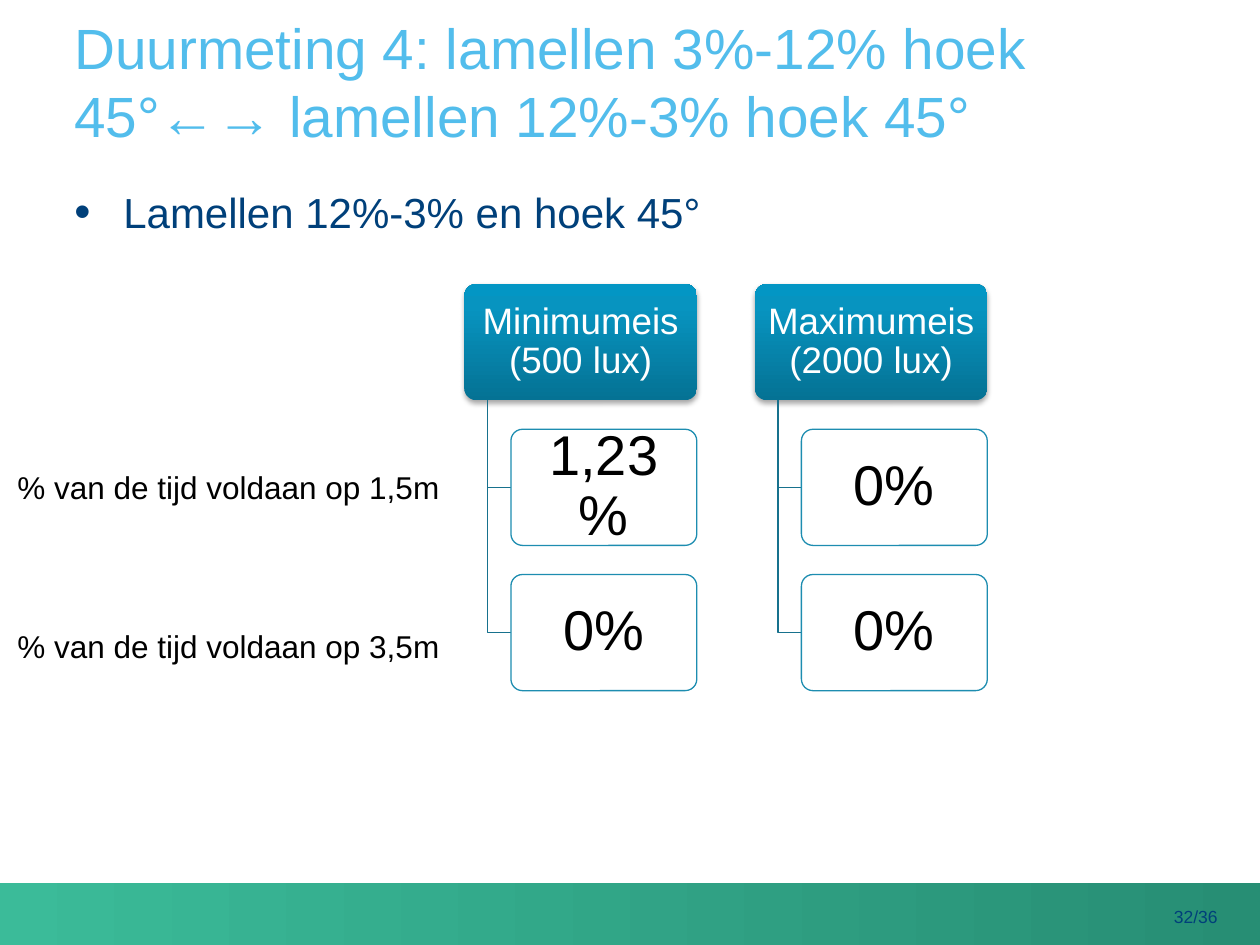
from dataclasses import dataclass

from lxml import etree
from pptx import Presentation
from pptx import util as u
from pptx.dml import color
from pptx.enum import shapes, text
from pptx.oxml import ns


@dataclass(frozen=True)
class Theme:
    font: str = "Arial"
    title: str = "52BDEC"
    navy: str = "00407A"
    black: str = "000000"
    white: str = "FFFFFF"
    branch: str = "17718D"
    border: str = "1D8DB0"
    footer: tuple = ((0, "3BBB99"), (100, "278E74"))
    header: tuple = ((0, "057294"), (80, "0794C0"), (100, "0396C4"))
    title_size: float = 32.4
    body_size: float = 24
    header_size: float = 21
    value_size: float = 32
    label_size: float = 18
    number_size: float = 10


def rgb(value):
    return color.RGBColor.from_string(value)


def add_xml(parent, tag, **attributes):
    return etree.SubElement(parent, ns.qn(tag), {k: str(v) for k, v in attributes.items()})


def write(shape, content, *, size, ink, font=Theme.font, align=text.PP_ALIGN.LEFT,
          anchor=text.MSO_ANCHOR.TOP, insets=(0, 0), wrap=True, spacing=None, bullet=None):
    frame = shape.text_frame
    frame.word_wrap = wrap
    frame.vertical_anchor = anchor
    frame.margin_left = frame.margin_right = u.Pt(insets[0])
    frame.margin_top = frame.margin_bottom = u.Pt(insets[1])
    paragraph = frame.paragraphs[0]
    paragraph.text = content
    paragraph.alignment = align
    if spacing:
        paragraph.line_spacing = spacing
    if bullet:
        properties = paragraph._p.get_or_add_pPr()
        indent = u.Pt(28)
        properties.set("marL", str(indent))
        properties.set("indent", str(-indent))
        add_xml(properties, "a:buSzPct", val=110000)
        add_xml(properties, "a:buFont", typeface=font)
        add_xml(properties, "a:buChar", char=bullet)
    for run in paragraph.runs:
        run.font.name = font
        run.font.size = u.Pt(size)
        run.font.color.rgb = rgb(ink)


class SlideBuilder:
    """Draws styled elements on the current slide, with lengths in points."""

    def __init__(self, slide, theme):
        self.slide = slide
        self.theme = theme

    def text_box(self, left, top, width, height, content, **style):
        shape = self.slide.shapes.add_textbox(*map(u.Pt, (left, top, width, height)))
        write(shape, content, **style)

    def block(self, kind, left, top, width, height):
        shape = self.slide.shapes.add_shape(kind, *map(u.Pt, (left, top, width, height)))
        shape.shadow.inherit = False
        shape.line.fill.background()
        return shape

    def gradient(self, shape, stops, angle):
        shape.fill.gradient()
        shape.fill.gradient_angle = angle
        stop_list = shape._element.spPr.find(".//" + ns.qn("a:gsLst"))
        for stop in list(stop_list):
            stop_list.remove(stop)
        for position, value in stops:
            stop = add_xml(stop_list, "a:gs", pos=position * 1000)
            add_xml(stop, "a:srgbClr", val=value)

    def footer(self, left, top, width, height):
        bar = self.block(shapes.MSO_SHAPE.RECTANGLE, left, top, width, height)
        self.gradient(bar, self.theme.footer, 0)

    def card(self, left, top, width, height, content, **style):
        shape = self.block(shapes.MSO_SHAPE.ROUNDED_RECTANGLE, left, top, width, height)
        shape.adjustments[0] = 0.1
        write(shape, content, align=text.PP_ALIGN.CENTER, anchor=text.MSO_ANCHOR.MIDDLE,
              spacing=0.9, **style)
        return shape

    def header(self, left, top, width, height, content):
        shape = self.card(left, top, width, height, content, size=self.theme.header_size,
                          ink=self.theme.white, insets=(4.7, 4))
        self.gradient(shape, self.theme.header, 90)
        effects = shape._element.spPr.find(ns.qn("a:effectLst"))
        shadow = add_xml(effects, "a:outerShdw", blurRad=u.Pt(3.1), dist=u.Pt(1.8),
                         dir=5400000, rotWithShape=0)
        ink = add_xml(shadow, "a:srgbClr", val=self.theme.black)
        add_xml(ink, "a:alpha", val=35000)

    def value(self, left, top, width, height, content):
        shape = self.card(left, top, width, height, content, size=self.theme.value_size,
                          ink=self.theme.black, insets=(6.9, 4.6))
        shape.fill.solid()
        shape.fill.fore_color.rgb = rgb(self.theme.white)
        fill = shape._element.spPr.find(ns.qn("a:solidFill"))
        add_xml(fill[0], "a:alpha", val=90000)
        shape.line.color.rgb = rgb(self.theme.border)
        shape.line.width = u.Pt(0.75)

    def branch(self, left, top, right, bottom):
        builder = self.slide.shapes.build_freeform(u.Pt(left), u.Pt(top))
        corner, end = (u.Pt(left), u.Pt(bottom)), (u.Pt(right), u.Pt(bottom))
        builder.add_line_segments([corner, end], close=False)
        shape = builder.convert_to_shape()
        shape.shadow.inherit = False
        shape.fill.background()
        shape.line.color.rgb = rgb(self.theme.branch)
        shape.line.width = u.Pt(0.75)

    def column(self, left, top, title, values):
        width, height, row_pitch = 132.8, 66.4, 83
        indent = width / 5
        self.header(left, top, width, height, title)
        for row, content in enumerate(values, 1):
            row_top = top + row * row_pitch
            self.branch(left + indent / 2, top + height, left + indent, row_top + height / 2)
            self.value(left + indent, row_top, width - indent, height, content)


def main():
    presentation = Presentation()
    presentation.slide_width, presentation.slide_height = u.Pt(720), u.Pt(540)
    theme = Theme()
    builder = SlideBuilder(presentation.slides.add_slide(presentation.slide_layouts[6]), theme)

    builder.footer(0, 504.6, 720, 43.2)
    builder.text_box(42.5, 14.4, 656, 70.6,
                     "Duurmeting 4: lamellen 3%-12% hoek 45°←→ lamellen 12%-3% hoek 45°",
                     size=theme.title_size, ink=theme.title, anchor=text.MSO_ANCHOR.BOTTOM)
    builder.text_box(42.5, 106.6, 656, 348.5, "Lamellen 12%-3% en hoek 45°",
                     size=theme.body_size, ink=theme.navy, bullet="•")

    columns = [("Minimumeis\v(500 lux)", ("1,23%", "0%")),
               ("Maximumeis\v(2000 lux)", ("0%", "0%"))]
    for index, (title, values) in enumerate(columns):
        builder.column(265.4 + index * 166, 162.3, title, values)

    for top, distance in ((264.2, "1,5m"), (355, "3,5m")):
        builder.text_box(2.9, top, 257.8, 28.8, f"% van de tijd voldaan op {distance}",
                         size=theme.label_size, ink=theme.black, insets=(7.2, 3.6), wrap=False)
    builder.text_box(646.6, 517.7, 73.4, 22.3, "32/36", size=theme.number_size,
                     ink=theme.navy, align=text.PP_ALIGN.CENTER)
    presentation.save("out.pptx")


if __name__ == "__main__":
    main()
